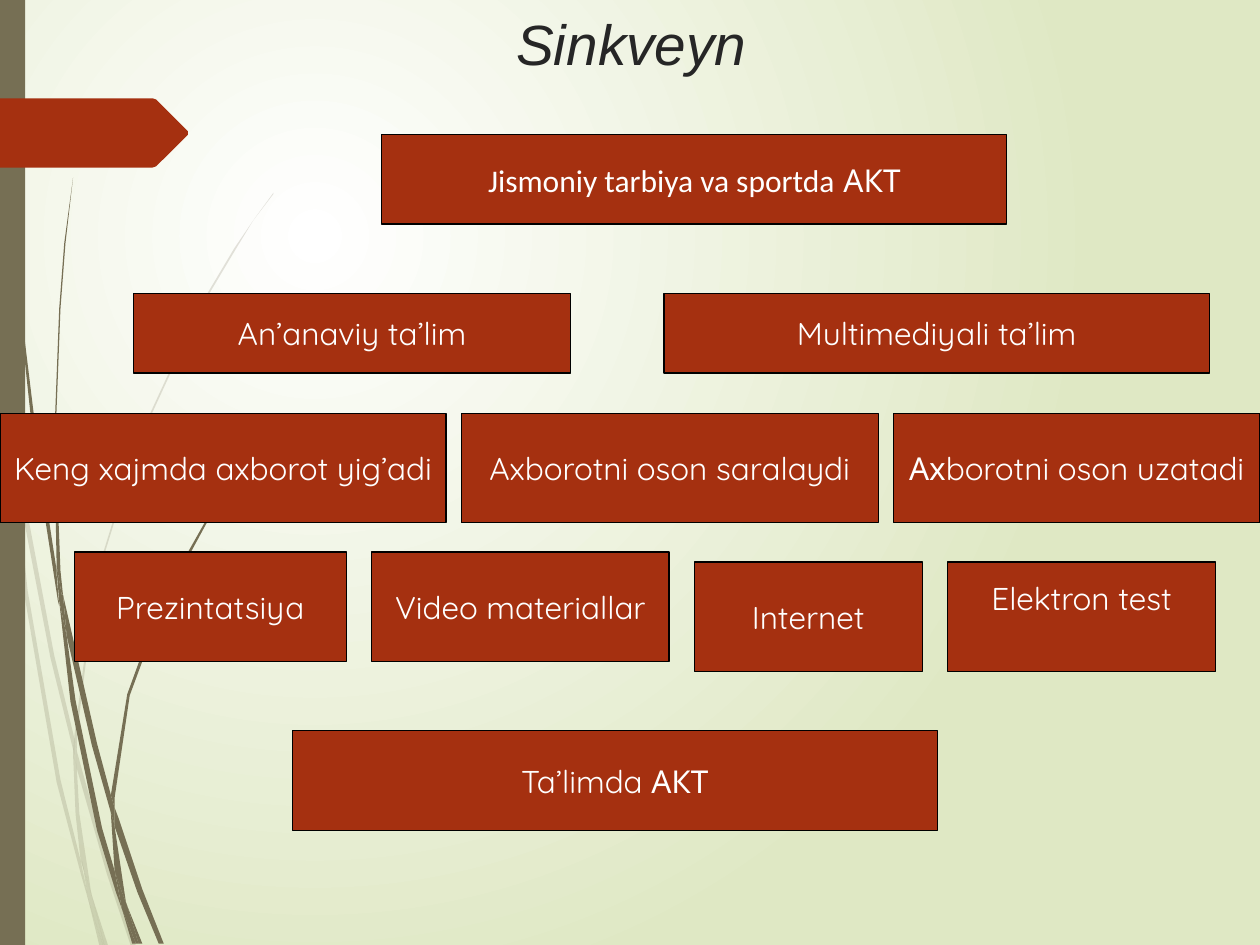
from lxml.etree import SubElement
from pptx import Presentation
from pptx.dml.color import RGBColor
from pptx.enum.shapes import MSO_SHAPE
from pptx.enum.text import MSO_ANCHOR, PP_ALIGN
from pptx.oxml.ns import qn
from pptx.util import Pt

COLORS = {
    "white": "FFFFFF",
    "mint": "DFE8C4",
    "stem": "766F54",
    "rust": "A53010",
    "ink": "262626",
    "black": "000000",
}
GRID = Pt(0.72)

FAINT_BLADES = [
    [(8, 350), (6, 322), (0, 282), (0, 299), (7, 344)],
    [(40, 522), (59, 599), (59, 586), (43, 520), (10, 345), (12, 376)],
    [(64, 607), (61, 596), (61, 610), (85, 694), (104, 751), (108, 751), (88, 692)],
    [(83, 751), (86, 751), (73, 711)],
    [(64, 683), (48, 619), (22, 469), (12, 376), (8, 350), (19, 470), (45, 621),
     (64, 693), (70, 714), (69, 707)],
    [(58, 599), (60, 646), (64, 683), (67, 692), (73, 711), (72, 706), (63, 646),
     (61, 610), (61, 608)],
    [(61, 584), (76, 462), (111, 349), (159, 245), (187, 198), (201, 175), (217, 154),
     (217, 153), (201, 175), (186, 197), (158, 244), (110, 348), (75, 461), (59, 584),
     (59, 586), (61, 596)],
    [(70, 714), (79, 751), (82, 751)],
    [(61, 608), (61, 610), (61, 596), (59, 586), (58, 599)],
    [(67, 692), (65, 683), (69, 707), (70, 714), (82, 751), (83, 751), (73, 711)],
]
SOLID_BLADES = [
    [(5, 110), (14, 233), (27, 355), (46, 477), (47, 481), (45, 457), (45, 453),
     (30, 355), (15, 232), (6, 109), (4, 48), (3, 0), (2, 0), (3, 48)],
    [(73, 592), (88, 645), (88, 633), (88, 631), (77, 590), (50, 472), (53, 505)],
    [(94, 649), (91, 641), (91, 656), (109, 708), (126, 749), (130, 749), (113, 706)],
    [(91, 691), (81, 657), (60, 556), (53, 505), (47, 477), (56, 557), (77, 659),
     (92, 708), (97, 722), (96, 717)],
    [(50, 472), (48, 453), (44, 349), (48, 245), (52, 193), (58, 141), (58, 141),
     (51, 193), (47, 245), (43, 349), (45, 449), (49, 472)],
    [(110, 749), (113, 749), (101, 719)],
    [(47, 477), (53, 505), (50, 472), (49, 472), (45, 449), (45, 453)],
    [(91, 633), (103, 552), (131, 476), (169, 406), (191, 374), (203, 359), (216, 344),
     (215, 344), (203, 358), (191, 373), (168, 405), (129, 474), (101, 551), (88, 631),
     (91, 641)],
    [(97, 722), (105, 749), (108, 749)],
    [(88, 645), (91, 691), (96, 706), (101, 719), (100, 716), (91, 656), (90, 651)],
    [(88, 645), (90, 651), (91, 656), (91, 641), (88, 631), (88, 633)],
    [(96, 706), (91, 691), (96, 717), (97, 722), (108, 749), (110, 749), (101, 719)],
]
ARROW = [(149, 107), (124, 132), (121, 133), (0, 133), (0, 78), (121, 78),
         (124, 79), (149, 104)]

ROWS = [
    (218.2, 77, 51.1, 0, [("Jismoniy tarbiya va sportda| АКТ", 357.1)]),
    (76.3, 167.8, 45.4, 53.3, [("An’anaviy ta’lim", 249.8), ("Multimediyali ta’lim", 311.8)]),
    (0, 236.2, 62.6, 8.64, [("Keng xajmda axborot yig’adi", 254.9),
                            ("Axborotni oson saralaydi", 238.3),
                            ("Ахborotni oson uzatadi", 209.5)]),
    (42.5, 315.4, 62.6, 14.4, [("Prezintatsiya", 155.5), ("Video materiallar", 169.9)]),
    (396.7, 321.1, 62.6, 14.4, [("Internet", 130.3), ("Elektron test", 153.4)]),
    (167, 417.6, 56.9, 0, [("Ta’limda АКТ", 368.6)]),
]


def rgb(name):
    """Return the named colour."""
    return RGBColor.from_string(COLORS[name])


def paint(shape, color, line=None):
    """Give a shape a flat fill, an optional outline and no shadow."""
    shape.shadow.inherit = False
    shape.fill.solid()
    shape.fill.fore_color.rgb = rgb(color)
    if line:
        shape.line.color.rgb = rgb(line)
        shape.line.width = Pt(0.75)
    else:
        shape.line.fill.background()


def paint_background(page):
    """Spread a round gradient from the upper left over the page."""
    fill = page.background.fill
    fill.gradient()
    for stop, name in zip(fill.gradient_stops, ("white", "mint")):
        stop.color.rgb = rgb(name)
    gradient = page.element.find(".//" + qn("a:gradFill"))
    gradient.remove(gradient.find(qn("a:lin")))
    circle = SubElement(gradient, qn("a:path"), path="circle")
    SubElement(circle, qn("a:fillToRect"), l="50000", t="50000", r="100000", b="100000")


def add_outline(shapes, left, top, points, color):
    """Draw a closed outline whose points count from the given corner."""
    builder = shapes.build_freeform(*points[0], scale=GRID)
    builder.add_line_segments(points[1:], close=True)
    shape = builder.convert_to_shape(Pt(left), Pt(top))
    paint(shape, color)
    return shape


def add_blades(page, left, top, blades, opacity=100):
    """Group grass blades of one opacity."""
    group = page.shapes.add_group_shape()
    for points in blades:
        blade = add_outline(group.shapes, left, top, points, "stem")
        if opacity < 100:
            color = blade.fill._xPr.find(".//" + qn("a:srgbClr"))
            SubElement(color, qn("a:alpha"), val=str(opacity * 1000))


def add_decoration(page, left, top, height):
    """Place the grass, the side band and the arrow at the left edge."""
    add_blades(page, left, top, FAINT_BLADES, 20)
    add_blades(page, left, top, SOLID_BLADES)
    band = page.shapes.add_shape(MSO_SHAPE.RECTANGLE, Pt(left), Pt(top), Pt(14.4), Pt(height))
    paint(band, "stem")
    add_outline(page.shapes, left, top, ARROW, "rust")


def add_title(page, left, top, width, height, text):
    """Write the centred italic title."""
    box = page.shapes.add_textbox(Pt(left), Pt(top), Pt(width), Pt(height))
    frame = box.text_frame
    frame.word_wrap = True
    frame.vertical_anchor = MSO_ANCHOR.MIDDLE
    para = frame.paragraphs[0]
    para.text = text
    para.alignment = PP_ALIGN.CENTER
    para.font.name = "Arial"
    para.font.size = Pt(32.4)
    para.font.italic = True
    para.font.color.rgb = rgb("ink")


def add_card(page, left, top, width, height, text):
    """Draw a card; text before a bar is set in Calibri."""
    card = page.shapes.add_shape(MSO_SHAPE.RECTANGLE, Pt(left), Pt(top), Pt(width), Pt(height))
    paint(card, "rust", "black")
    frame = card.text_frame
    frame.word_wrap = False
    frame.vertical_anchor = MSO_ANCHOR.MIDDLE
    para = frame.paragraphs[0]
    para.alignment = PP_ALIGN.CENTER
    para.font.size = Pt(18)
    para.font.color.rgb = rgb("white")
    parts = text.split("|")
    for part, font in zip(parts, ("Calibri", "Quicksand")[-len(parts):]):
        span = para.add_run()
        span.text = part
        span.font.name = font
    return card


def add_row(page, left, top, height, gap, cards):
    """Set cards side by side with equal gaps and return them."""
    placed = []
    for text, width in cards:
        placed.append(add_card(page, left, top, width, height, text))
        left += width + gap
    return placed


def main():
    """Build and save the deck."""
    deck = Presentation()
    deck.slide_width, deck.slide_height = Pt(720), Pt(540)
    page = deck.slides.add_slide(deck.slide_layouts[6])
    paint_background(page)
    add_decoration(page, 0, 0, 540)
    add_title(page, 36.7, 0, 648, 49, "Sinkveyn")
    rows = [add_row(page, *row) for row in ROWS]
    test_card = rows[4][1]
    test_card.text_frame.margin_bottom = Pt(25)
    deck.save("out.pptx")


if __name__ == "__main__":
    main()
